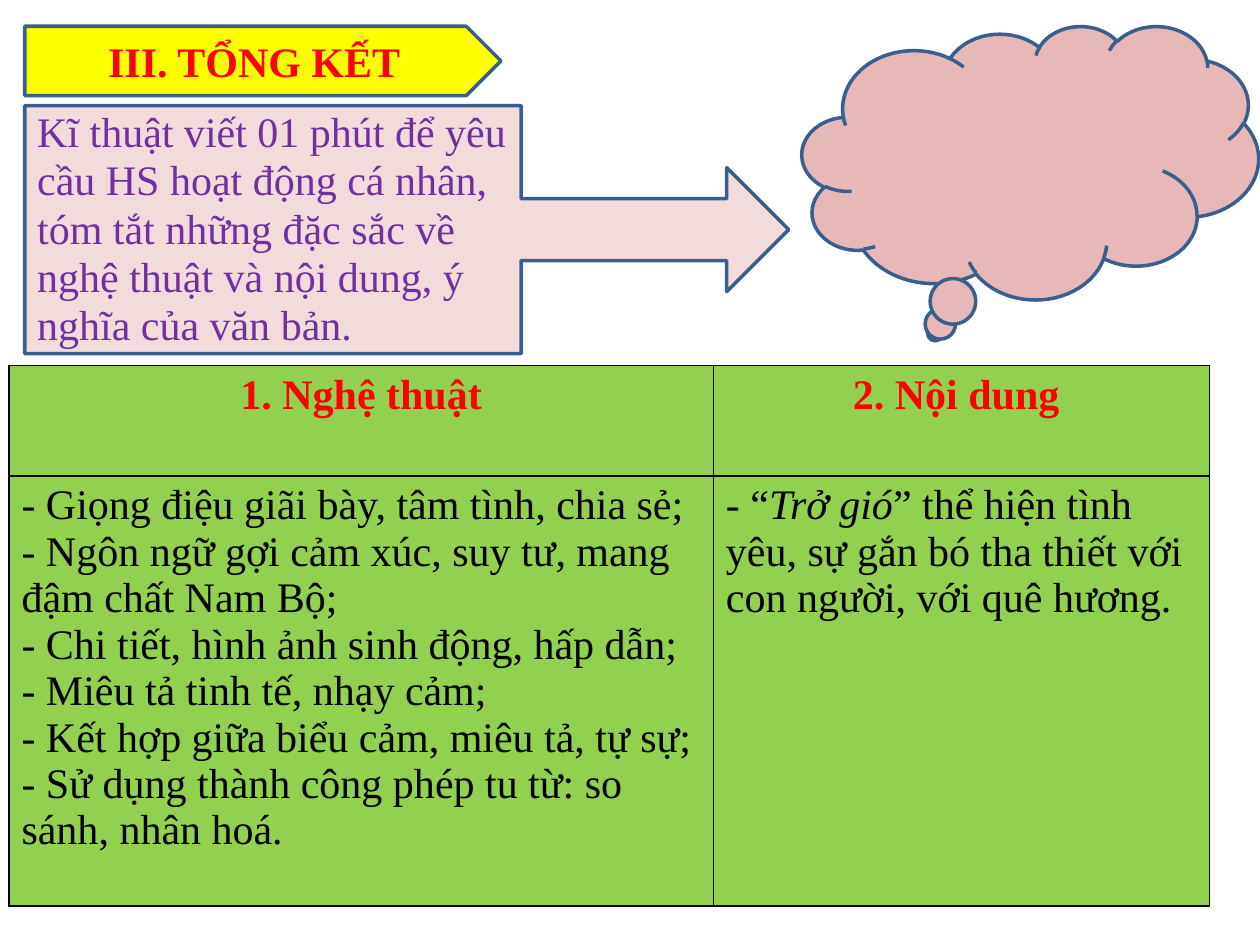
from pptx import Presentation
from pptx import util as u
from pptx.dml.color import RGBColor
from pptx.enum import shapes, text
from pptx.oxml import parse_xml
from pptx.oxml.ns import nsdecls

COLORS = {
    "yellow": "FFFF00", "rose": "E6B9B8", "blush": "F2DCDB", "green": "92D050",
    "outline": "3A5F8C", "red": "FF0000", "purple": "7030A0", "black": "000000",
}
FONT = "Times New Roman"
HEADING = {"color": "red", "bold": True, "align": text.PP_ALIGN.CENTER}

TITLE = [["III. TỔNG KẾT"]]
TASK = [["Kĩ thuật viết 01 phút để yêu cầu HS hoạt động cá nhân, tóm tắt những "
         "đặc sắc về nghệ thuật và nội dung, ý nghĩa của văn bản."]]

SHAPES = [
    (shapes.MSO_SHAPE.PENTAGON, (0.5, 0.53, 9.6, 1.4), "yellow", TITLE, HEADING),
    (shapes.MSO_SHAPE.CLOUD_CALLOUT, (16.17, 0.52, 9.2, 5.51), "rose", None, {}),
    (shapes.MSO_SHAPE.RIGHT_ARROW_CALLOUT, (0.5, 2.13, 15.4, 5), "blush", TASK,
     {"color": "purple", "spacing": 0.96}),
]

TABLE_LEFT, TABLE_TOP = 0.18, 7.37
COLUMN_WIDTHS = [14.2, 10]
ROW_HEIGHTS = [2.23, 8.66]
ROWS = [
    [[["1. Nghệ thuật"]], [["2. Nội dung "]]],
    [
        [
            ["- Giọng điệu giãi bày, tâm tình, chia sẻ;"],
            ["- Ngôn ngữ gợi cảm xúc, suy tư, mang đậm chất Nam Bộ;"],
            ["- Chi tiết, hình ảnh sinh động, hấp dẫn;"],
            ["- Miêu tả tinh tế, nhạy cảm;"],
            ["- Kết hợp giữa biểu cảm, miêu tả, tự sự;"],
            ["- Sử dụng thành công phép tu từ: so sánh, nhân hoá."],
        ],
        [["- “", ("Trở gió", True),
          "” thể hiện tình yêu, sự gắn bó tha thiết với con người, với quê hương."]],
    ],
]
ROW_FORMATS = [HEADING, {}]


def rgb(name):
    return RGBColor.from_string(COLORS[name])


def write(frame, paragraphs, color="black", bold=False,
          align=text.PP_ALIGN.LEFT, spacing=1.0, size=24):
    frame.word_wrap = True
    for index, pieces in enumerate(paragraphs):
        paragraph = frame.add_paragraph() if index else frame.paragraphs[0]
        paragraph.alignment = align
        paragraph.line_spacing = spacing
        for piece in pieces:
            words, italic = piece if isinstance(piece, tuple) else (piece, False)
            run = paragraph.add_run()
            run.text = words
            run.font.name = FONT
            run.font.size = u.Pt(size)
            run.font.bold = bold
            run.font.italic = italic
            run.font.color.rgb = rgb(color)


def add_figure(slide, kind, box, fill, paragraphs, style):
    shape = slide.shapes.add_shape(kind, *map(u.Cm, box))
    shape.shadow.inherit = False
    shape.fill.solid()
    shape.fill.fore_color.rgb = rgb(fill)
    shape.line.color.rgb = rgb("outline")
    shape.line.width = u.Pt(2)
    if paragraphs:
        shape.text_frame.vertical_anchor = text.MSO_ANCHOR.MIDDLE
        write(shape.text_frame, paragraphs, **style)


def add_borders(cell):
    properties = cell._tc.get_or_add_tcPr()
    for position, side in enumerate(("lnL", "lnR", "lnT", "lnB")):
        properties.insert(position, parse_xml(
            f'<a:{side} {nsdecls("a")} w="{u.Pt(1)}"><a:solidFill>'
            f'<a:srgbClr val="{COLORS["black"]}"/></a:solidFill></a:{side}>'))


def add_summary(slide):
    table = slide.shapes.add_table(
        len(ROWS), len(COLUMN_WIDTHS), u.Cm(TABLE_LEFT), u.Cm(TABLE_TOP),
        u.Cm(sum(COLUMN_WIDTHS)), u.Cm(sum(ROW_HEIGHTS))).table
    for column, width in zip(table.columns, COLUMN_WIDTHS):
        column.width = u.Cm(width)
    for row, height, contents, style in zip(table.rows, ROW_HEIGHTS, ROWS, ROW_FORMATS):
        row.height = u.Cm(height)
        for cell, paragraphs in zip(row.cells, contents):
            cell.fill.solid()
            cell.fill.fore_color.rgb = rgb("green")
            add_borders(cell)
            write(cell.text_frame, paragraphs, **style)


def main():
    presentation = Presentation()
    presentation.slide_width = u.Cm(25.4)
    presentation.slide_height = u.Cm(19.05)
    slide = presentation.slides.add_slide(presentation.slide_layouts[6])
    for figure in SHAPES:
        add_figure(slide, *figure)
    add_summary(slide)
    presentation.save("out.pptx")


if __name__ == "__main__":
    main()
